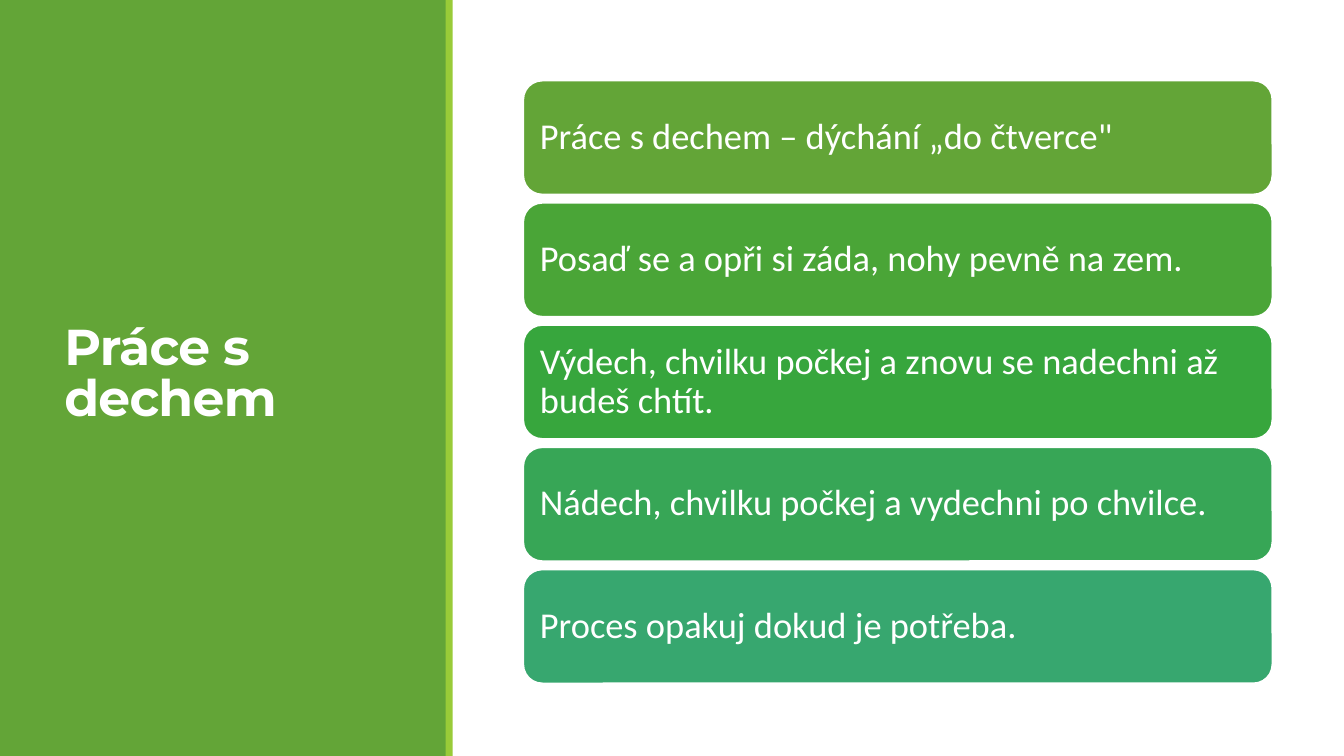
from pptx import Presentation
from pptx.dml.color import RGBColor
from pptx.enum.shapes import MSO_SHAPE as SHAPE
from pptx.enum.text import MSO_ANCHOR as ANCHOR, PP_ALIGN as ALIGN
from pptx.util import Inches, Pt

COLORS = {"white": "FFFFFF", "panel": "63A537", "stripe": "99CB38"}

STEPS = [
    ("Práce s dechem – dýchání „do čtverce\"", "63A537"),
    ("Posaď se a opři si záda, nohy pevně na zem.", "4AA537"),
    ("Výdech, chvilku počkej a znovu se nadechni až budeš chtít.", "37A63D"),
    ("Nádech, chvilku počkej a vydechni po chvilce.", "37A656"),
    ("Proces opakuj dokud je potřeba.", "37A76F"),
]
STEP_TOP = 0.8
STEP_PITCH = 1.2125


def rgb(color):
    return RGBColor.from_string(color)


def add_box(s, kind, left, top, width, height, fill, line=None):
    sp = s.shapes.add_shape(kind, Inches(left), Inches(top), Inches(width), Inches(height))
    sp.shadow.inherit = False
    sp.fill.solid()
    sp.fill.fore_color.rgb = rgb(fill)
    if line:
        sp.line.color.rgb = rgb(line)
        sp.line.width = Pt(1.25)
    else:
        sp.line.fill.background()
    return sp


def write_text(sp, text, font, size, spacing, bold=False):
    tf = sp.text_frame
    tf.word_wrap = True
    tf.vertical_anchor = ANCHOR.MIDDLE
    p = tf.paragraphs[0]
    p.alignment = ALIGN.LEFT
    p.line_spacing = spacing
    p.font.name = font
    p.font.size = Pt(size)
    p.font.bold = bold
    p.font.color.rgb = rgb(COLORS["white"])
    r = p.add_run()
    r.text = text
    return r


def add_title(s, text):
    sp = s.shapes.add_textbox(Inches(0.54), Inches(0.57), Inches(3.37), Inches(6.31))
    r = write_text(sp, text, "Montserrat", 36, 0.85, bold=True)
    r.font._element.set("spc", "-50")


def add_step(s, index, text, fill):
    top = STEP_TOP + index * STEP_PITCH
    sp = add_box(s, SHAPE.ROUNDED_RECTANGLE, 5.19, top, 7.43, 1.13, fill, COLORS["white"])
    write_text(sp, text, "Calibri", 26, 0.9)
    tf = sp.text_frame
    tf.margin_left = tf.margin_right = tf.margin_top = tf.margin_bottom = Inches(0.11)


def main():
    prs = Presentation()
    prs.slide_width, prs.slide_height = Inches(13.33), Inches(7.5)
    s = prs.slides.add_slide(prs.slide_layouts[6])
    add_box(s, SHAPE.RECTANGLE, 0, 0, 4.43, 7.5, COLORS["panel"])
    add_title(s, "Práce s dechem")
    add_box(s, SHAPE.RECTANGLE, 4.42, 0, 0.07, 7.5, COLORS["stripe"])
    for index, (text, fill) in enumerate(STEPS):
        add_step(s, index, text, fill)
    prs.save("out.pptx")


if __name__ == "__main__":
    main()
